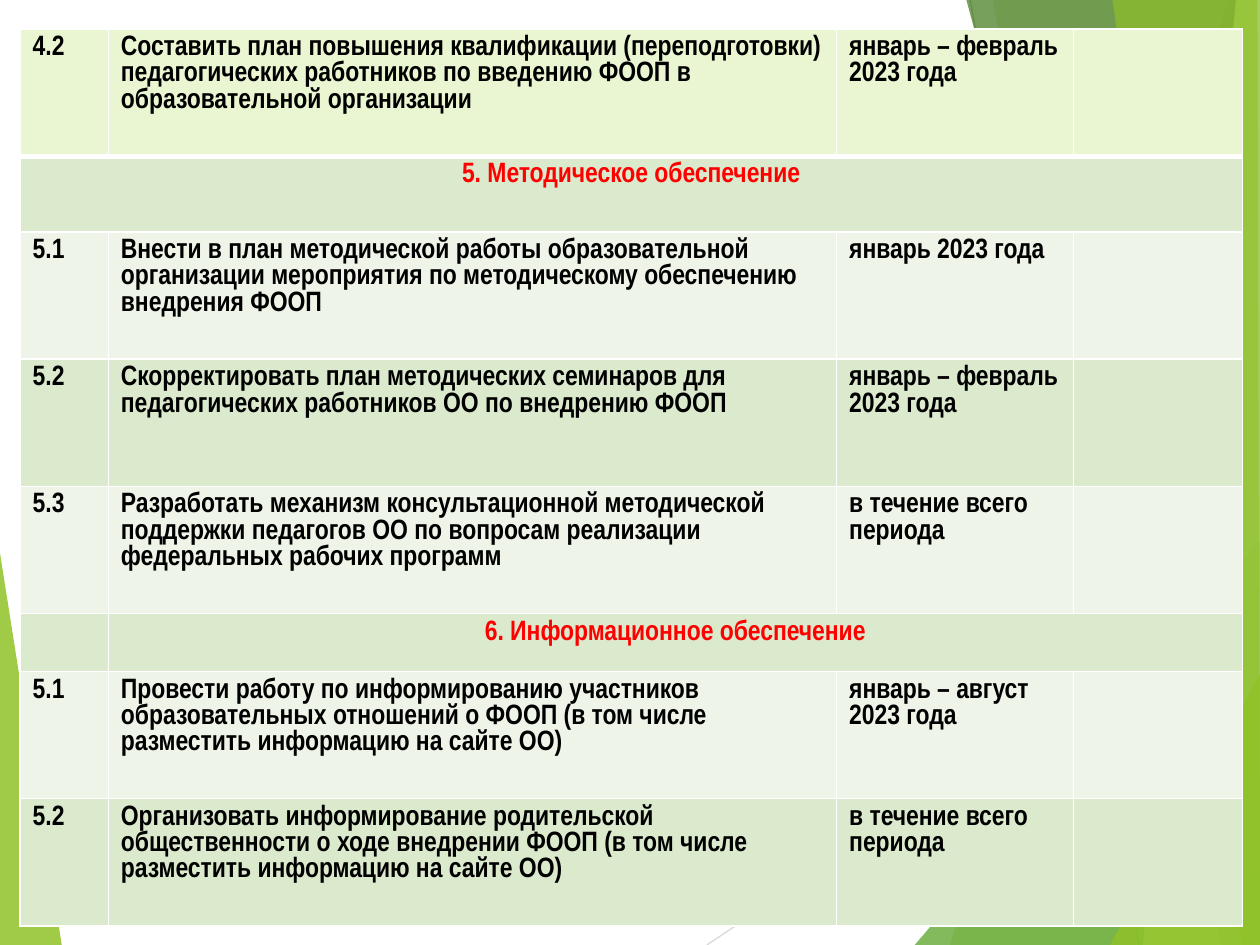
from lxml.etree import SubElement as Sub
from pptx import Presentation as Deck
from pptx.dml.color import RGBColor as Rgb
from pptx.enum.shapes import MSO_CONNECTOR as Link
from pptx.enum.text import PP_ALIGN as Align
from pptx.oxml.ns import qn
from pptx.util import Inches, Pt

FONT = "Arial Narrow"
BLACK = Rgb(0, 0, 0)
RED = Rgb(255, 0, 0)
WHITE = Rgb(255, 255, 255)
LIME = Rgb(0x90, 0xC2, 0x26)
GREEN = Rgb(0x54, 0xA0, 0x21)
DARK = Rgb(0x3F, 0x78, 0x19)
PALE = Rgb(0xC0, 0xE4, 0x74)
TOP = Rgb(0xEA, 0xF6, 0xD1)
BAND = Rgb(0xDB, 0xE9, 0xCD)
LIGHT = Rgb(0xEE, 0xF4, 0xE8)
GREY = Rgb(0xD9, 0xD9, 0xD9)
STEEL = Rgb(0xBF, 0xBF, 0xBF)

LEFT = ([(0, 4.39), (0.49, 7.5), (0, 7.5)], LIME, 85)
LINES = [((5.61, 7.5), (10, 4.57), GREY), ((7.7, 0), (9.04, 7.5), STEEL)]
RIGHT = [
    ([(9.75, 0), (7.54, 7.5), (10, 7.5), (10, 0)], LIME, 30),
    ([(7.88, 0), (9.19, 7.5), (10, 7.5), (10, 0)], LIME, 20),
    ([(7.26, 7.5), (10, 4.29), (10, 7.5)], GREEN, 72),
    ([(7.67, 0), (9.7, 7.5), (10, 7.5), (10, 0)], DARK, 70),
    ([(9.81, 0), (9.07, 7.5), (10, 7.5), (10, 0)], PALE, 70),
    ([(8.83, 0), (9.86, 7.5), (10, 7.5), (9.98, 0)], LIME, 65),
    ([(8.81, 7.5), (10, 5.35), (10, 7.5)], LIME, 80),
]

COLS = [0.7, 5.78, 1.88, 1.34]
ROWS = [1.01, 0.6, 1.01, 1.01, 1.01, 0.46, 1.01, 1.01]
HEADS = {1: 0, 5: 1}
PLAN = [
    ["4.2", "Составить план повышения квалификации (переподготовки) педагогических "
     "работников по введению ФООП в образовательной организации",
     "январь – февраль 2023 года"],
    ["5. Методическое обеспечение"],
    ["5.1", "Внести в план методической работы образовательной организации "
     "мероприятия по методическому обеспечению внедрения ФООП",
     "январь 2023 года"],
    ["5.2", "Скорректировать план методических семинаров для педагогических "
     "работников ОО по внедрению ФООП", "январь – февраль 2023 года"],
    ["5.3", "Разработать механизм консультационной методической поддержки "
     "педагогов ОО по вопросам реализации федеральных рабочих программ",
     "в течение всего периода"],
    ["", "6. Информационное обеспечение"],
    ["5.1", "Провести работу по информированию участников образовательных "
     "отношений о ФООП (в том числе разместить информацию на сайте ОО)",
     "январь – август 2023 года"],
    ["5.2", "Организовать информирование родительской общественности о ходе "
     "внедрении ФООП (в том числе разместить информацию на сайте ОО)",
     "в течение всего периода"],
]


def add_facet(slide, pts, color, alpha):
    """Draw a see-through polygon with alpha in percent."""
    pts = [(Inches(x), Inches(y)) for x, y in pts]
    pen = slide.shapes.build_freeform(*pts[0], scale=1.0)
    pen.add_line_segments(pts[1:], close=True)
    shape = pen.convert_to_shape()
    shape.shadow.inherit = False
    shape.fill.solid()
    shape.fill.fore_color.rgb = color
    tint = shape.fill._xPr.find(".//" + qn("a:srgbClr"))
    Sub(tint, qn("a:alpha"), val=str(alpha * 1000))
    shape.line.fill.background()


def add_line(slide, start, end, color):
    """Draw a thin straight line."""
    ends = [Inches(v) for v in start + end]
    line = slide.shapes.add_connector(Link.STRAIGHT, *ends)
    line.line.color.rgb = color
    line.line.width = Pt(0.75)
    Sub(line._element.spPr, qn("a:effectLst"))


def set_edges(cell, base):
    """Give a cell white borders, with a chosen bottom width."""
    props = cell._tc.get_or_add_tcPr()
    for spot, side in enumerate("LRTB"):
        width = Pt(base if side == "B" else 1)
        edge = Sub(props, qn("a:ln" + side), w=str(width))
        fill = Sub(edge, qn("a:solidFill"))
        Sub(fill, qn("a:srgbClr"), val=str(WHITE))
        props.remove(edge)
        props.insert(spot, edge)


def set_text(cell, text, color, align):
    """Write one bold run into a cell."""
    para = cell.text_frame.paragraphs[0]
    para.alignment = align
    run = para.add_run()
    run.text = text
    font = run.font
    font.name, font.size, font.bold = FONT, Pt(16), True
    font.color.rgb = color


def add_plan(slide):
    """Build the table of planned work with its section rows."""
    frame = slide.shapes.add_table(
        len(ROWS), len(COLS), Inches(0.16), Inches(0.23),
        Inches(sum(COLS)), Inches(sum(ROWS)))
    table = frame.table
    for col, width in zip(table.columns, COLS):
        col.width = Inches(width)
    for row, height in zip(table.rows, ROWS):
        row.height = Inches(height)
    for r, words in enumerate(PLAN):
        shade = TOP if r == 0 else BAND if r % 2 else LIGHT
        for c in range(len(COLS)):
            cell = table.cell(r, c)
            cell.fill.solid()
            cell.fill.fore_color.rgb = shade
            set_edges(cell, 1 if r else 3)
        for c, text in enumerate(words):
            head = HEADS.get(r) == c
            if head:
                table.cell(r, c).merge(table.cell(r, len(COLS) - 1))
            if text:
                set_text(table.cell(r, c), text, RED if head else BLACK,
                         Align.CENTER if head else Align.LEFT)


def main():
    """Build and save the slide."""
    deck = Deck()
    deck.slide_width, deck.slide_height = Inches(10), Inches(7.5)
    slide = deck.slides.add_slide(deck.slide_layouts[6])
    add_facet(slide, *LEFT)
    for line in LINES:
        add_line(slide, *line)
    for facet in RIGHT:
        add_facet(slide, *facet)
    add_plan(slide)
    deck.save("out.pptx")


if __name__ == "__main__":
    main()
